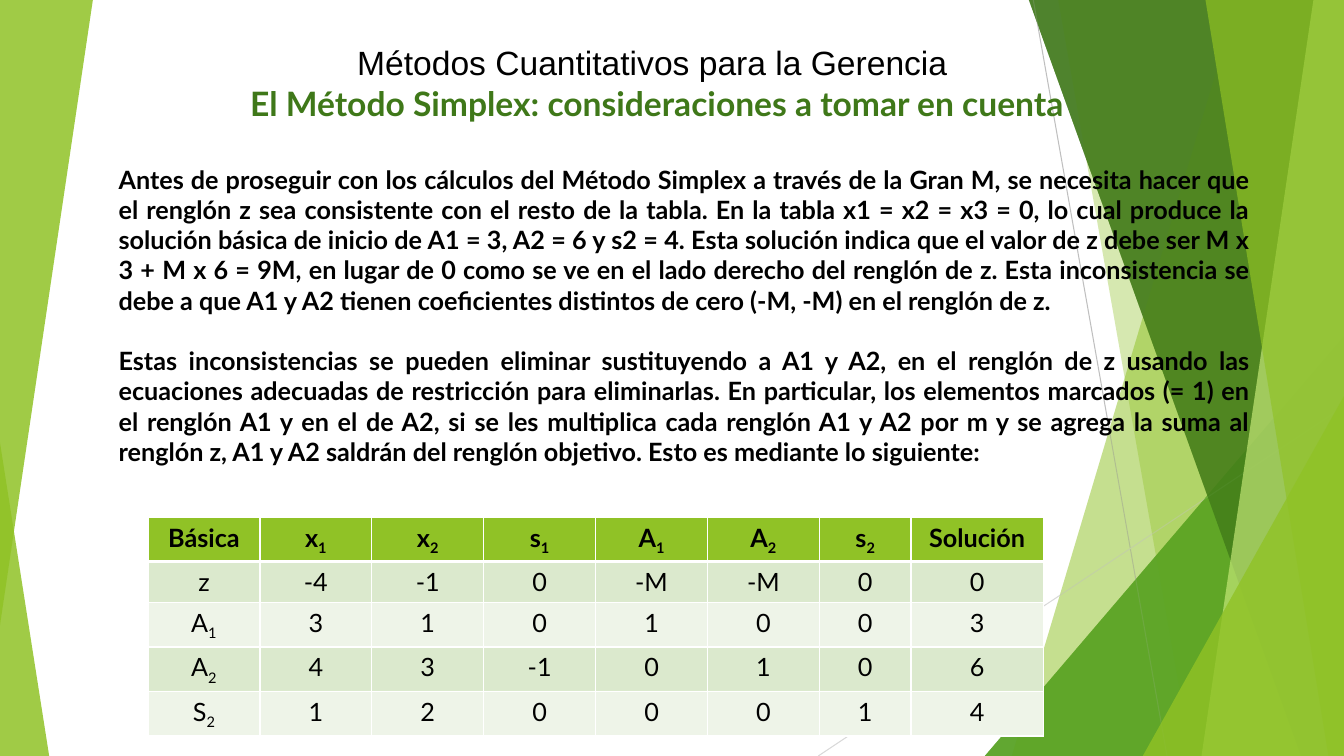
from dataclasses import dataclass

from lxml import etree
from pptx import Presentation
from pptx.dml.color import RGBColor
from pptx.enum.shapes import MSO_CONNECTOR, MSO_SHAPE
from pptx.enum.text import MSO_ANCHOR, MSO_AUTO_SIZE, PP_ALIGN
from pptx.oxml.ns import qn
from pptx.util import Cm, Pt

TRIANGLE = MSO_SHAPE.ISOSCELES_TRIANGLE
STRAIGHT = MSO_CONNECTOR.STRAIGHT
TOP = MSO_ANCHOR.TOP
NO_AUTOFIT = MSO_AUTO_SIZE.NONE
CENTER = PP_ALIGN.CENTER
JUSTIFY = PP_ALIGN.JUSTIFY

TITLE_ONLY_LAYOUT = 5
SLIDE_WIDTH = 33.87
SLIDE_HEIGHT = 19.05


@dataclass(frozen=True)
class Theme:
    lime: str = "90C226"
    green: str = "54A021"
    dark_green: str = "3F7819"
    pale_lime: str = "C0E474"
    text: str = "000000"
    white: str = "FFFFFF"
    line_gray: str = "BFBFBF"
    light_gray: str = "D9D9D9"
    bands: tuple[str, str] = ("DBE9CD", "EEF4E8")
    course_font: str = "Arial"
    font: str = "Lato"
    title_size: float = 24
    body_size: float = 18
    paragraph_gap: float = 21.6


@dataclass(frozen=True)
class Panel:
    top_x: float
    bottom_x: float
    color: str
    opacity: int


@dataclass(frozen=True)
class Triangle:
    left: float
    top: float
    width: float
    height: float
    apex: float
    color: str
    opacity: int
    rotation: float = 0


@dataclass(frozen=True)
class Line:
    start: tuple[float, float]
    end: tuple[float, float]
    color: str


THEME = Theme()

RIGHT_FACETS = (
    Panel(31.19, 25.5, THEME.lime, 30),
    Panel(26.67, 30.02, THEME.lime, 20),
    Triangle(24.82, 8.46, 9.05, 10.59, 1, THEME.green, 72),
    Panel(25.93, 32.79, THEME.dark_green, 70),
    Panel(33.1, 30.28, THEME.pale_lime, 70),
    Panel(30.38, 33.48, THEME.lime, 65),
    Triangle(28.8, 9.98, 5.07, 9.07, 1, THEME.lime, 80),
)
DECORATIONS = (
    *RIGHT_FACETS,
    Triangle(0, 11.15, 1.24, 7.9, 0, THEME.lime, 85),
    Line((26.04, 0), (29.41, SLIDE_HEIGHT), THEME.line_gray),
    Line((SLIDE_WIDTH, 10.24), (20.62, SLIDE_HEIGHT), THEME.light_gray),
    *RIGHT_FACETS,
    Triangle(0, 0, 2.34, 15.75, 1, THEME.lime, 85, rotation=180),
)

BODY = (
    "Antes de proseguir con los cálculos del Método Simplex a través de la Gran M, se necesita hacer que "
    "el renglón z sea consistente con el resto de la tabla. En la tabla x1 = x2 = x3 = 0, lo cual produce la "
    "solución básica de inicio de A1 = 3, A2 = 6 y s2 = 4. Esta solución indica que el valor de z debe ser M x "
    "3 + M x 6 = 9M, en lugar de 0 como se ve en el lado derecho del renglón de z. Esta inconsistencia se "
    "debe a que A1 y A2 tienen coeficientes distintos de cero (-M, -M) en el renglón de z. ",
    "Estas inconsistencias se pueden eliminar sustituyendo a A1 y A2, en el renglón de z usando las "
    "ecuaciones adecuadas de restricción para eliminarlas. En particular, los elementos marcados (= 1) en "
    "el renglón A1 y en el de A2, si se les multiplica cada renglón A1 y A2 por m y se agrega la suma al "
    "renglón z, A1 y A2 saldrán del renglón objetivo. Esto es mediante lo siguiente:",
)

SIMPLEX_ROWS = (
    ("Básica", "x_1", "x_2", "s_1", "A_1", "A_2", "s_2", "Solución"),
    ("z", "-4", "-1", "0", "-M", "-M", "0", "0"),
    ("A_1", "3", "1", "0", "1", "0", "0", "3"),
    ("A_2", "4", "3", "-1", "0", "1", "0", "6"),
    ("S_2", "1", "2", "0", "0", "0", "1", "4"),
)
COLUMN_WIDTHS = (2.82,) * 6 + (2.31, 3.33)
ROW_HEIGHT = 1.03


def write(paragraph, text: str, *, font: str = THEME.font, size: float = THEME.body_size,
          color: str = THEME.text, bold: bool = False, align=CENTER) -> None:
    paragraph.alignment = align
    for index, part in enumerate(text.split("_")):
        run = paragraph.add_run()
        run.text = part
        run.font.name = font
        run.font.size = Pt(size)
        run.font.bold = bold
        run.font.color.rgb = RGBColor.from_string(color)
        if index:
            run.font._element.set("baseline", "-25000")


def paint(shape, color: str, opacity: int) -> None:
    shape.shadow.inherit = False
    shape.line.fill.background()
    shape.fill.solid()
    shape.fill.fore_color.rgb = RGBColor.from_string(color)
    color_element = shape.element.find(".//" + qn("a:srgbClr"))
    etree.SubElement(color_element, qn("a:alpha")).set("val", str(opacity * 1000))


def draw_panel(slide, panel: Panel) -> None:
    builder = slide.shapes.build_freeform(Cm(panel.top_x), 0)
    builder.add_line_segments([
        (Cm(SLIDE_WIDTH), 0),
        (Cm(SLIDE_WIDTH), Cm(SLIDE_HEIGHT)),
        (Cm(panel.bottom_x), Cm(SLIDE_HEIGHT)),
    ], close=True)
    paint(builder.convert_to_shape(), panel.color, panel.opacity)


def draw_triangle(slide, triangle: Triangle) -> None:
    shape = slide.shapes.add_shape(TRIANGLE, Cm(triangle.left), Cm(triangle.top),
                                   Cm(triangle.width), Cm(triangle.height))
    shape.adjustments[0] = triangle.apex
    shape.rotation = triangle.rotation
    paint(shape, triangle.color, triangle.opacity)


def draw_line(slide, line: Line) -> None:
    connector = slide.shapes.add_connector(STRAIGHT, *map(Cm, line.start + line.end))
    connector.line.color.rgb = RGBColor.from_string(line.color)
    connector.line.width = Pt(0.75)
    etree.SubElement(connector.element.spPr, qn("a:effectLst"))


def draw_title(slide) -> None:
    title = slide.shapes.title
    title.left, title.top, title.width, title.height = map(Cm, (4.78, 0.94, 23.55, 2.31))
    title.element.getparent().append(title.element)
    frame = title.text_frame
    frame.auto_size = NO_AUTOFIT
    frame.vertical_anchor = TOP
    write(frame.paragraphs[0], "Métodos Cuantitativos para la Gerencia ",
          font=THEME.course_font, size=THEME.title_size)
    write(frame.add_paragraph(), "El Método Simplex: consideraciones a tomar en cuenta",
          size=THEME.title_size, color=THEME.dark_green, bold=True)


def draw_body(slide) -> None:
    frame = slide.shapes.add_textbox(Cm(2.74), Cm(4.01), Cm(29.01), Cm(8.71)).text_frame
    frame.word_wrap = True
    first, second = frame.paragraphs[0], frame.add_paragraph()
    second.space_before = Pt(THEME.paragraph_gap)
    for paragraph, text in zip((first, second), BODY):
        write(paragraph, text, bold=True, align=JUSTIFY)


def set_borders(cell, top: float, bottom: float) -> None:
    properties = cell._tc.get_or_add_tcPr()
    widths = {"a:lnL": 1, "a:lnR": 1, "a:lnT": top, "a:lnB": bottom}
    for position, (tag, width) in enumerate(widths.items()):
        border = etree.Element(qn(tag), w=str(Pt(width)))
        fill = etree.SubElement(border, qn("a:solidFill"))
        etree.SubElement(fill, qn("a:srgbClr")).set("val", THEME.white)
        properties.insert(position, border)


def draw_simplex_table(slide) -> None:
    table = slide.shapes.add_table(
        len(SIMPLEX_ROWS), len(COLUMN_WIDTHS), Cm(3.73), Cm(13.03),
        Cm(sum(COLUMN_WIDTHS)), Cm(ROW_HEIGHT * len(SIMPLEX_ROWS))).table
    for column, width in zip(table.columns, COLUMN_WIDTHS):
        column.width = Cm(width)
    for row_index, values in enumerate(SIMPLEX_ROWS):
        header = row_index == 0
        table.rows[row_index].height = Cm(ROW_HEIGHT)
        color = THEME.lime if header else THEME.bands[(row_index - 1) % 2]
        for column_index, value in enumerate(values):
            cell = table.cell(row_index, column_index)
            cell.fill.solid()
            cell.fill.fore_color.rgb = RGBColor.from_string(color)
            set_borders(cell, top=3 if row_index == 1 else 1, bottom=3 if header else 1)
            write(cell.text_frame.paragraphs[0], value, bold=header)


def main() -> None:
    presentation = Presentation()
    presentation.slide_width, presentation.slide_height = Cm(SLIDE_WIDTH), Cm(SLIDE_HEIGHT)
    slide = presentation.slides.add_slide(presentation.slide_layouts[TITLE_ONLY_LAYOUT])
    painters = {Panel: draw_panel, Triangle: draw_triangle, Line: draw_line}
    for decoration in DECORATIONS:
        painters[type(decoration)](slide, decoration)
    draw_title(slide)
    draw_body(slide)
    draw_simplex_table(slide)
    presentation.save("out.pptx")


if __name__ == "__main__":
    main()
